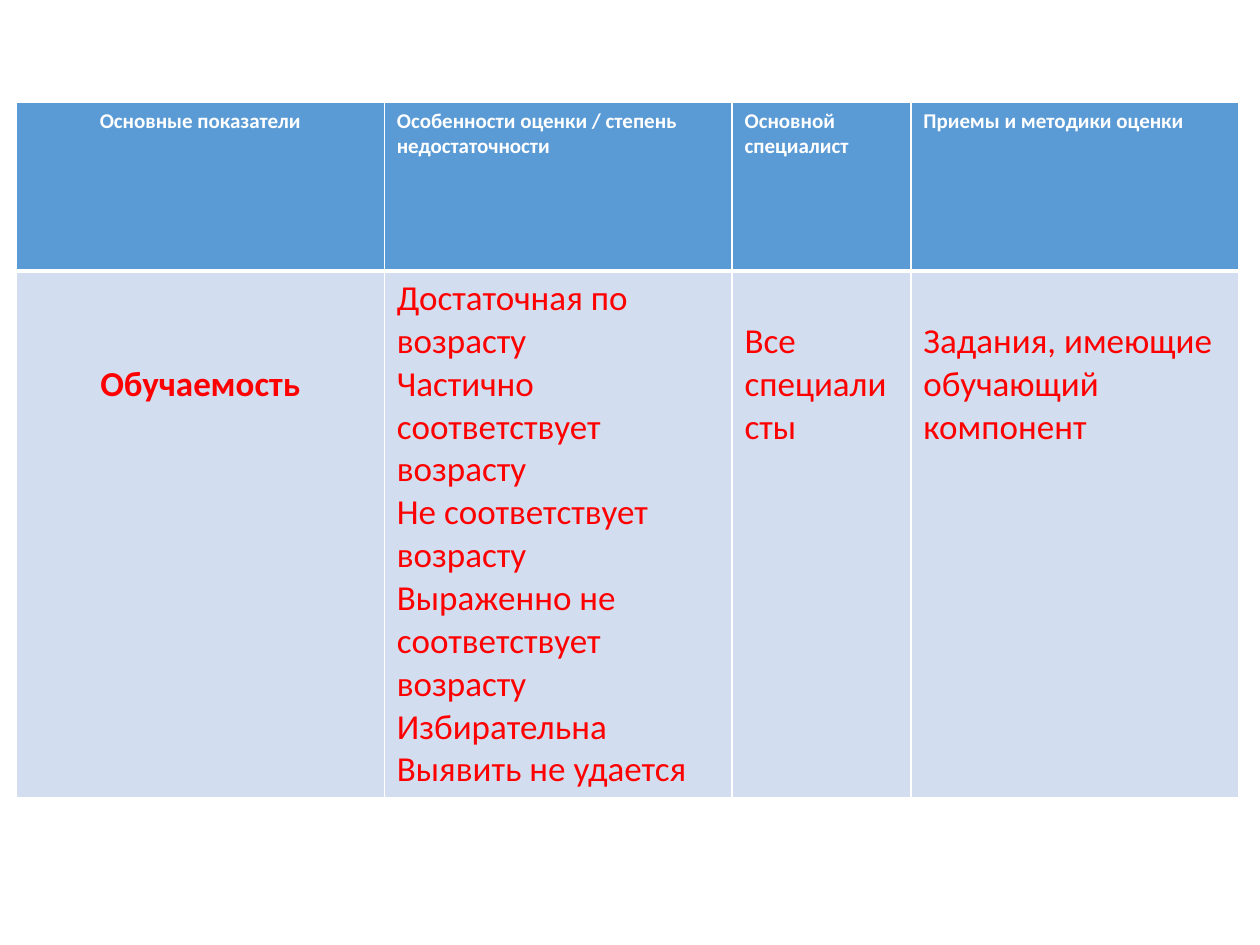
from lxml import etree
from pptx import Presentation
from pptx.dml.color import RGBColor
from pptx.enum.text import PP_ALIGN
from pptx.oxml.ns import qn
from pptx.util import Inches, Pt

CENTER, LEFT = PP_ALIGN.CENTER, PP_ALIGN.LEFT
WHITE = RGBColor(0xFF, 0xFF, 0xFF)
RED = RGBColor(0xFF, 0x00, 0x00)
HEADER_BLUE = RGBColor(0x5B, 0x9B, 0xD5)
BODY_BLUE = RGBColor(0xD2, 0xDE, 0xEF)

COLUMN_WIDTHS = [2.92, 2.76, 1.42, 2.6]
ROW_HEIGHTS = [1.34, 4.1]
BODY_LINE = 0.34
HEADINGS = [
    "Основные показатели",
    "Особенности оценки / степень недостаточности",
    "Основной специалист",
    "Приемы и методики оценки",
]
LEARNING_ABILITY = [
    (["Обучаемость"], 2),
    ([
        "Достаточная по возрасту",
        "Частично соответствует возрасту",
        "Не соответствует возрасту",
        "Выраженно не соответствует возрасту",
        "Избирательна",
        "Выявить не удается",
    ], 0),
    (["Все специалисты"], 1),
    (["Задания, имеющие обучающий компонент"], 1),
]
HEADER_FONT = {"name": "Calibri", "size": Pt(12), "bold": True}
BODY_FONT = {"name": "Calibri", "size": Pt(20), "bold": False}


def set_borders(cell, **widths):
    """Draw white cell borders, with widths in points by side."""
    properties = cell._tc.get_or_add_tcPr()
    for side in ("L", "R", "T", "B"):
        border = etree.SubElement(
            properties, qn(f"a:ln{side}"), w=str(Pt(widths.get(side, 1))))
        fill = etree.SubElement(border, qn("a:solidFill"))
        etree.SubElement(fill, qn("a:srgbClr"), val=str(WHITE))


def fill_cell(cell, lines, font_format, text_color, background, alignment):
    """Write formatted paragraphs on a coloured cell."""
    cell.fill.solid()
    cell.fill.fore_color.rgb = background
    cell.text = "\n".join(lines)
    for paragraph in cell.text_frame.paragraphs:
        paragraph.alignment = alignment
        font = paragraph.runs[0].font
        for attribute, value in font_format.items():
            setattr(font, attribute, value)
        font.color.rgb = text_color


def add_assessment_table(slide):
    """Add the table of indicators, ratings, specialists and methods."""
    table = slide.shapes.add_table(
        len(ROW_HEIGHTS), len(COLUMN_WIDTHS), Inches(0.13), Inches(0.81),
        Inches(sum(COLUMN_WIDTHS)), Inches(sum(ROW_HEIGHTS))).table
    for column, width in zip(table.columns, COLUMN_WIDTHS):
        column.width = Inches(width)
    for row, height in zip(table.rows, ROW_HEIGHTS):
        row.height = Inches(height)

    for index, (heading, (lines, lead)) in enumerate(zip(HEADINGS, LEARNING_ABILITY)):
        alignment = LEFT if index else CENTER
        header, body = table.cell(0, index), table.cell(1, index)
        set_borders(header, B=3)
        set_borders(body, T=3)
        fill_cell(header, [heading], HEADER_FONT, WHITE, HEADER_BLUE, alignment)
        body_font = {**BODY_FONT, "bold": index == 0}
        fill_cell(body, lines, body_font, RED, BODY_BLUE, alignment)
        body.margin_top = Inches(0.05 + lead * BODY_LINE)


def main():
    """Build and save the slide."""
    presentation = Presentation()
    presentation.slide_width, presentation.slide_height = Inches(10), Inches(7.5)
    slide = presentation.slides.add_slide(presentation.slide_layouts[6])
    add_assessment_table(slide)
    presentation.save("out.pptx")


if __name__ == "__main__":
    main()
